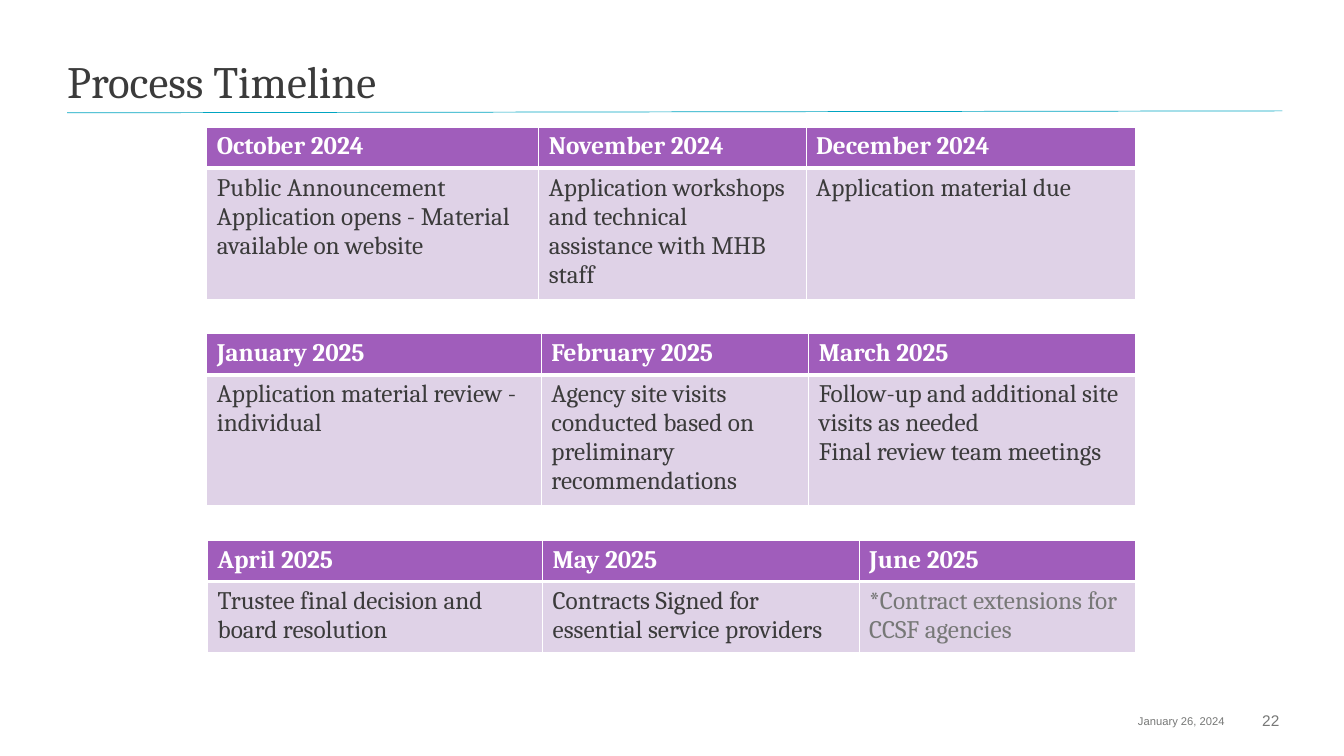
from lxml.etree import SubElement
from pptx import Presentation
from pptx.dml.color import RGBColor
from pptx.enum.shapes import MSO_CONNECTOR
from pptx.enum.text import MSO_ANCHOR, MSO_AUTO_SIZE, PP_ALIGN
from pptx.oxml.ns import qn
from pptx.util import Pt

WHITE = RGBColor(0xFF, 0xFF, 0xFF)
DARK = RGBColor(0x3B, 0x3B, 0x3B)
GRAY = RGBColor(0x77, 0x78, 0x77)
TEAL = RGBColor(0x00, 0xA5, 0xC1)
PURPLE = RGBColor(0xA0, 0x5D, 0xBB)
LAVENDER = RGBColor(0xDF, 0xD2, 0xE7)

HEADER_HEIGHT = 29.5
THIN, THICK = 1, 3

# left, top, column widths, body height, months, activities
QUARTERS = [
    (147.7, 90.7, (237.1, 191, 235), 93.6,
     ("October 2024", "November 2024", "December 2024"),
     ("Public Announcement\nApplication opens - Material available on website",
      "Application workshops and technical assistance with MHB staff",
      "Application material due")),
    (147.7, 238.3, (239, 191, 233.1), 93.6,
     ("January 2025", "February 2025", "March 2025"),
     ("Application material review - individual",
      "Agency site visits conducted based on preliminary recommendations",
      "Follow-up and additional site visits as needed\nFinal review team meetings")),
    (148.3, 385.9, (239.3, 226.1, 197.6), 50.4,
     ("April 2025", "May 2025", "June 2025"),
     ("Trustee final decision and board resolution",
      "Contracts Signed for essential service providers",
      "*Contract extensions for CCSF agencies")),
]


class TimelineSlide:
    heading_font = "Cambria"
    footer_font = "Arial"

    def __init__(self, presentation):
        self.slide = presentation.slides.add_slide(presentation.slide_layouts[5])

    def format_text(self, frame, name, size, color, bold=False, alignment=PP_ALIGN.LEFT):
        for paragraph in frame.paragraphs:
            paragraph.alignment = alignment
            font = paragraph.font
            font.name, font.size, font.bold = name, Pt(size), bold
            font.color.rgb = color

    def title(self, text, left, top, width, height):
        shape = self.slide.shapes.title
        shape.left, shape.top, shape.width, shape.height = map(Pt, (left, top, width, height))
        frame = shape.text_frame
        frame.text = text
        frame.auto_size = MSO_AUTO_SIZE.NONE
        frame.vertical_anchor = MSO_ANCHOR.BOTTOM
        frame.margin_left = frame.margin_top = frame.margin_right = frame.margin_bottom = 0
        frame.paragraphs[0].line_spacing = Pt(33)
        self.format_text(frame, self.heading_font, 32, DARK)

    def rule(self, start_x, start_y, end_x, end_y):
        connector = self.slide.shapes.add_connector(
            MSO_CONNECTOR.STRAIGHT, Pt(start_x), Pt(start_y), Pt(end_x), Pt(end_y))
        connector.line.color.rgb = TEAL
        connector.line.width = Pt(0.5)
        SubElement(connector._element.spPr, qn("a:effectLst"))

    def footer(self, text, left, size):
        box = self.slide.shapes.add_textbox(Pt(left), Pt(500.4), Pt(223.9), Pt(28.8))
        frame = box.text_frame
        frame.word_wrap = True
        frame.vertical_anchor = MSO_ANCHOR.MIDDLE
        frame.text = text
        self.format_text(frame, self.footer_font, size, GRAY, alignment=PP_ALIGN.RIGHT)

    def cell_borders(self, cell, top, bottom):
        properties = cell._tc.get_or_add_tcPr()
        for side, width in (("L", THIN), ("R", THIN), ("T", top), ("B", bottom)):
            line = SubElement(properties, qn(f"a:ln{side}"), w=str(Pt(width)))
            fill = SubElement(line, qn("a:solidFill"))
            SubElement(fill, qn("a:srgbClr"), val=str(WHITE))

    def cell(self, cell, text, fill, color, bold, top, bottom):
        self.cell_borders(cell, top, bottom)
        cell.fill.solid()
        cell.fill.fore_color.rgb = fill
        cell.text_frame.text = text
        self.format_text(cell.text_frame, self.heading_font, 18, color, bold)

    def quarter_table(self, left, top, widths, body_height, months, activities):
        table = self.slide.shapes.add_table(
            2, len(widths), Pt(left), Pt(top), Pt(sum(widths)),
            Pt(HEADER_HEIGHT + body_height)).table
        table.rows[0].height = Pt(HEADER_HEIGHT)
        table.rows[1].height = Pt(body_height)
        for index, (width, month, activity) in enumerate(zip(widths, months, activities)):
            table.columns[index].width = Pt(width)
            self.cell(table.cell(0, index), month, PURPLE, WHITE, True, THIN, THICK)
            color = GRAY if activity.startswith("*") else DARK
            self.cell(table.cell(1, index), activity, LAVENDER, color, False, THICK, THIN)


def main():
    presentation = Presentation()
    presentation.slide_width, presentation.slide_height = Pt(960), Pt(540)
    timeline = TimelineSlide(presentation)
    timeline.rule(48, 80.6, 916, 79.2)
    timeline.title("Process Timeline", 48, 10, 864, 67)
    timeline.footer("January 26, 2024", 658.1, 8)
    timeline.footer("22", 697, 11)
    for quarter in QUARTERS:
        timeline.quarter_table(*quarter)
    presentation.save("out.pptx")


if __name__ == "__main__":
    main()
